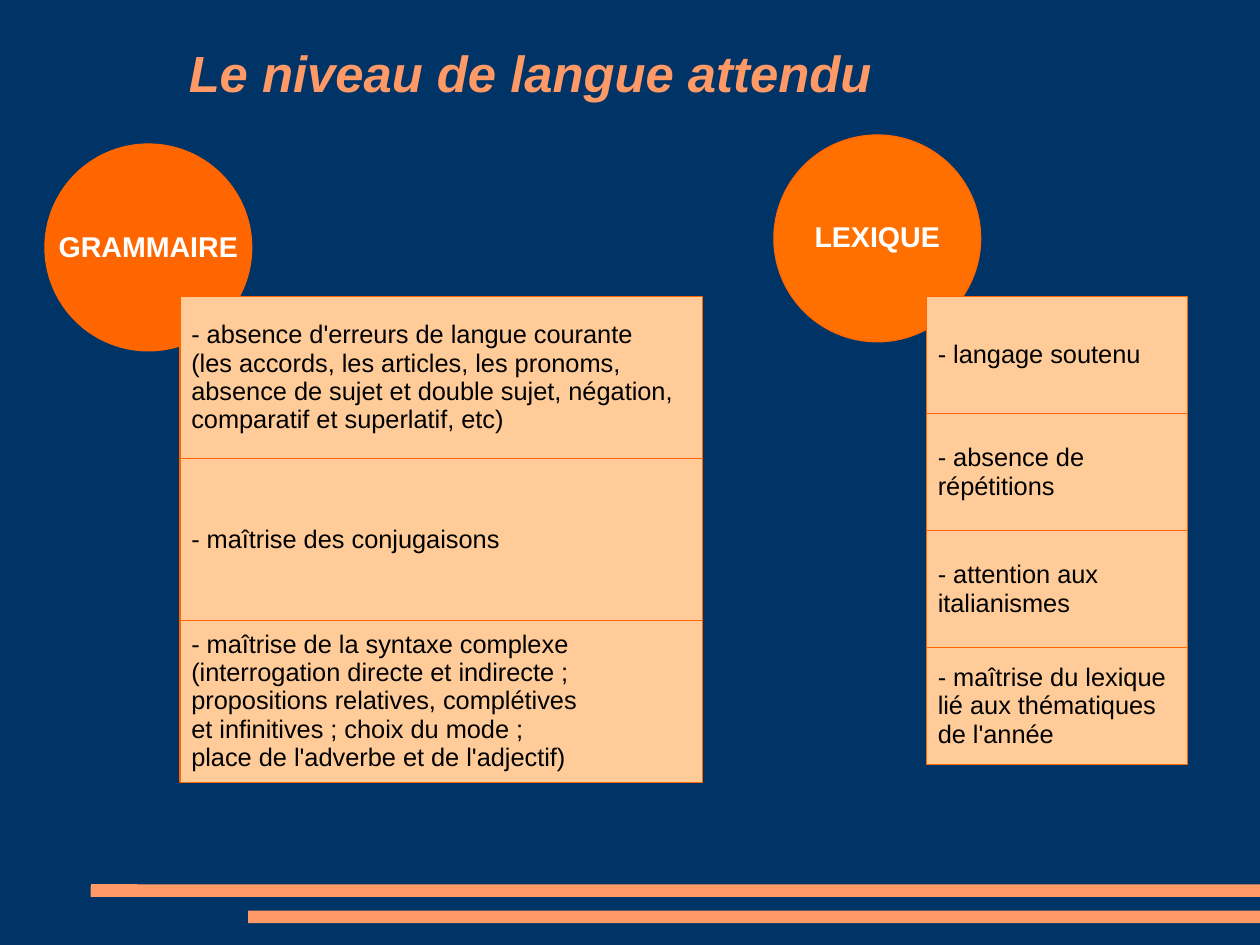
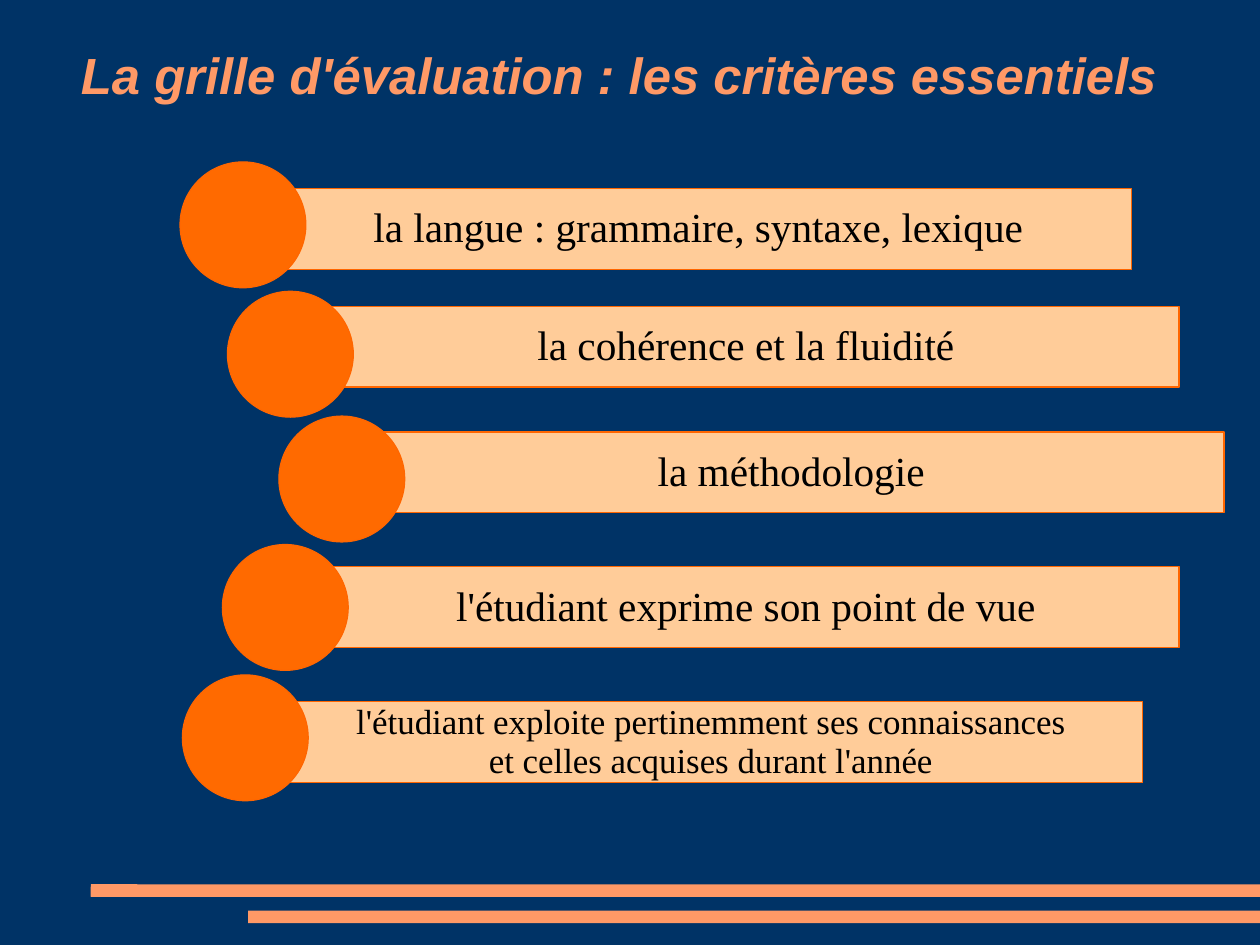
import pptx
import pptx.util
import pptx.dml.color
import pptx.enum.shapes
import pptx.enum.text

Pt = pptx.util.Pt
RGBColor = pptx.dml.color.RGBColor
Shape = pptx.enum.shapes.MSO_SHAPE
Anchor = pptx.enum.text.MSO_ANCHOR
Align = pptx.enum.text.PP_ALIGN

NAVY = RGBColor(0x00, 0x33, 0x66)
SALMON = RGBColor(0xFF, 0x99, 0x66)
ORANGE = RGBColor(0xFF, 0x66, 0x00)
LEXIQUE_ORANGE = RGBColor(0xFF, 0x70, 0x00)
BULLET_ORANGE = RGBColor(0xFF, 0x6A, 0x00)
PEACH = RGBColor(0xFF, 0xCC, 0x99)
WHITE = RGBColor(0xFF, 0xFF, 0xFF)
BLACK = RGBColor(0x00, 0x00, 0x00)

SLIDE_W, SLIDE_H = 793.75, 595.25
BANDS = [(57.2, 557), (156.4, 573.6)]
BAND_H = 7.9

TOPIC_D = 130.3
COLUMN_TOP = 187
GRAMMAIRE = [
    ["- absence d'erreurs de langue courante",
     "(les accords, les articles, les pronoms,",
     "absence de sujet et double sujet, négation,",
     "comparatif et superlatif, etc)"],
    ["- maîtrise des conjugaisons"],
    ["- maîtrise de la syntaxe complexe",
     "(interrogation directe et indirecte ;",
     "propositions relatives, complétives",
     "et infinitives ; choix du mode ;",
     "place de l'adverbe et de l'adjectif)"],
]
LEXIQUE = [
    ["- langage soutenu"],
    ["- absence de", "répétitions"],
    ["- attention aux", "italianismes"],
    ["- maîtrise du lexique", "lié aux thématiques", "de l'année"],
]

BAR_W, BAR_H = 538.6, 51
BULLET_D = 79.3
# circle left and top, bar left and top, text size, lines
CRITERIA = [
    (113.4, 102, 174.2, 118.8, 26, ["la langue : grammaire, syntaxe, lexique "]),
    (143.3, 183.5, 204.1, 192.8, 26, ["la cohérence et la fluidité "]),
    (175.7, 262.1, 232.5, 272.1, 26, ["la méthodologie "]),
    (140.1, 343, 204.1, 357, 26, ["l'étudiant exprime son point de vue "]),
    (114.9, 425.1, 181.2, 442, 22,
     ["l'étudiant exploite pertinemment ses connaissances ",
      "et celles acquises durant l'année "]),
]


def write(shape, lines, size, font="Arial", color=BLACK, bold=False,
          italic=False, align=Align.LEFT, wrap=True, insets=(7.2, 3.6, 7.2, 3.6)):
    """Fill a shape with one paragraph per line; insets are left, top, right, bottom."""
    frame = shape.text_frame
    frame.word_wrap = wrap
    frame.vertical_anchor = Anchor.MIDDLE
    (frame.margin_left, frame.margin_top,
     frame.margin_right, frame.margin_bottom) = map(Pt, insets)
    for i, line in enumerate(lines):
        paragraph = frame.paragraphs[0] if i == 0 else frame.add_paragraph()
        paragraph.alignment = align
        paragraph.line_spacing = 0.93
        run = paragraph.add_run()
        run.text = line
        run.font.name = font
        run.font.size = Pt(size)
        run.font.bold = bold
        run.font.italic = italic
        run.font.color.rgb = color


def add_block(slide, kind, left, top, width, height, fill, outline=ORANGE):
    block = slide.shapes.add_shape(kind, Pt(left), Pt(top), Pt(width), Pt(height))
    block.shadow.inherit = False
    block.fill.solid()
    block.fill.fore_color.rgb = fill
    if outline is None:
        block.line.fill.background()
    else:
        block.line.color.rgb = outline
        block.line.width = Pt(0.75)
    return block


def add_titled_slide(prs, title, left, top, width):
    """Add a slide with the shared bands and title style."""
    slide = prs.slides.add_slide(prs.slide_layouts[6])
    for band_left, band_top in BANDS:
        band = add_block(slide, Shape.ROUNDED_RECTANGLE, band_left, band_top,
                         SLIDE_W - band_left, BAND_H, SALMON, outline=None)
        band.adjustments[0] = 0.02
    heading = slide.shapes.add_textbox(Pt(left), Pt(top), Pt(width), Pt(99.4))
    write(heading, [title], 32, color=SALMON, bold=True, italic=True,
          insets=(0, 1.4, 0, 0))
    return slide


def add_topic(slide, name, left, top, fill):
    circle = add_block(slide, Shape.OVAL, left, top, TOPIC_D, TOPIC_D, fill)
    write(circle, [name], 18, color=WHITE, bold=True, align=Align.CENTER, wrap=False)


def add_column(slide, cells, left, width, height):
    """Stack equal boxes downwards from the common top."""
    for i, lines in enumerate(cells):
        cell = add_block(slide, Shape.RECTANGLE, left, COLUMN_TOP + i * height,
                         width, height, PEACH)
        write(cell, lines, 16)


def add_criterion(slide, circle_left, circle_top, bar_left, bar_top, size, lines):
    bar = add_block(slide, Shape.RECTANGLE, bar_left, bar_top, BAR_W, BAR_H, PEACH)
    write(bar, lines, size, font="Times New Roman", align=Align.CENTER, wrap=False)
    add_block(slide, Shape.OVAL, circle_left, circle_top, BULLET_D, BULLET_D,
              BULLET_ORANGE)


def main():
    prs = pptx.Presentation()
    prs.slide_width, prs.slide_height = Pt(SLIDE_W), Pt(SLIDE_H)
    backdrop = prs.slide_master.background.fill
    backdrop.solid()
    backdrop.fore_color.rgb = NAVY

    level = add_titled_slide(prs, "Le niveau de langue attendu", 118.9, -2.9, 677.5)
    add_topic(level, "GRAMMAIRE", 28.3, 90.7, ORANGE)
    add_topic(level, "LEXIQUE", 487.5, 85, LEXIQUE_ORANGE)
    add_column(level, GRAMMAIRE, 113.4, 328.9, 101.9)
    add_column(level, LEXIQUE, 583.7, 164.3, 73.7)

    grid = add_titled_slide(
        prs, "La grille d'évaluation : les critères essentiels", 51, -1.4, 757.4)
    for criterion in CRITERIA:
        add_criterion(grid, *criterion)

    prs.save("out.pptx")


if __name__ == "__main__":
    main()
